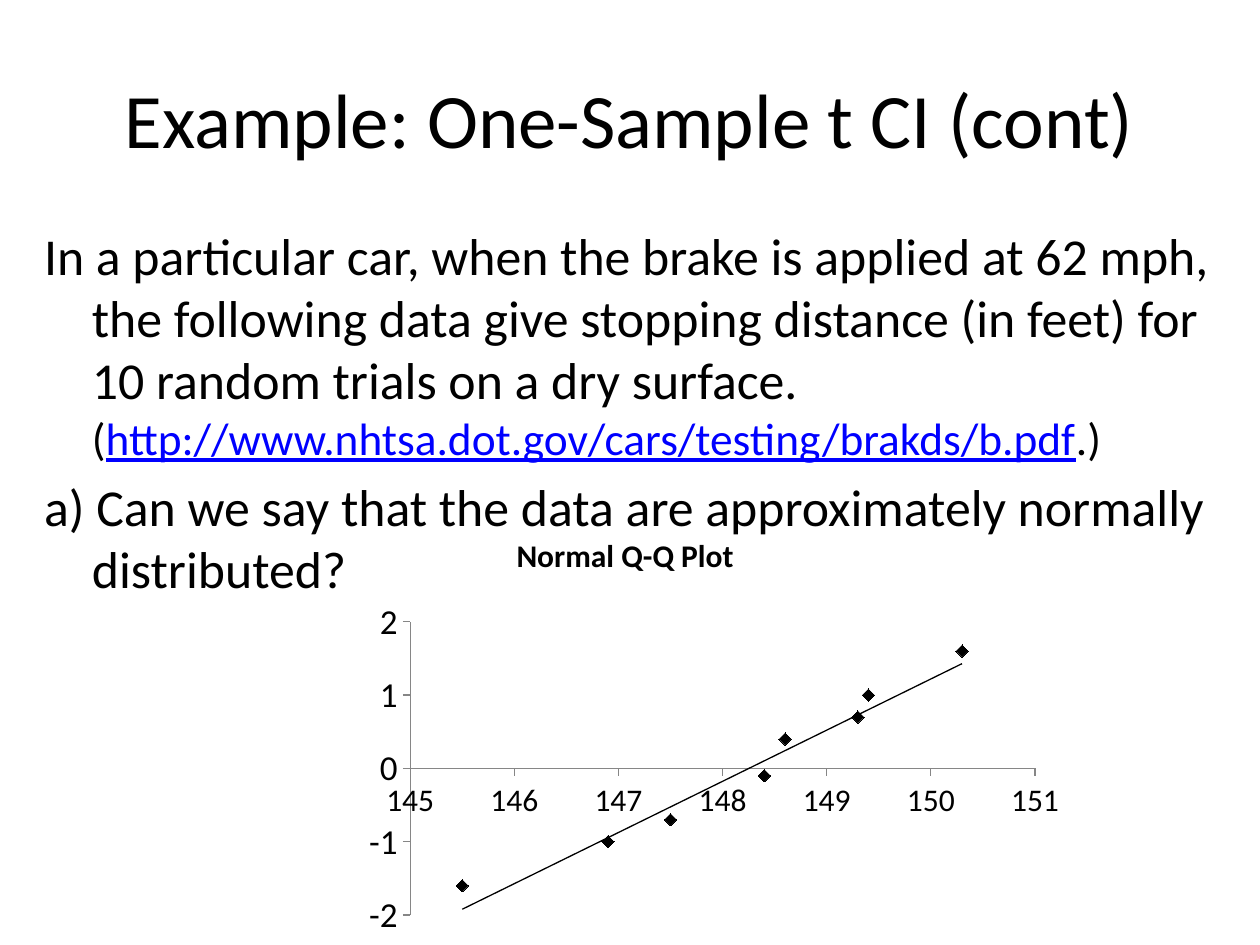
from lxml.etree import SubElement
from pptx import Presentation
from pptx.chart.data import XyChartData
from pptx.dml.color import RGBColor
from pptx.enum.chart import XL_CHART_TYPE as ChartType, XL_MARKER_STYLE as Marker
from pptx.enum.chart import XL_TICK_MARK as Tick
from pptx.enum.text import MSO_ANCHOR as Anchor, PP_ALIGN as Align
from pptx.oxml import parse_xml
from pptx.oxml.ns import nsdecls, qn
from pptx.util import Inches, Pt

WIDTH, HEIGHT = 10, 7.5
FONT = "Calibri"
COLORS = {"ink": "000000", "link": "0000FF", "axis": "868686"}
POINTS = [
    (146.9, -1), (148.4, -0.1), (149.4, 1), (148.6, 0.4), (150.3, 1.6),
    (147.5, -0.7), (147.5, -0.7), (149.3, 0.7), (148.4, -0.1), (145.5, -1.6),
]


def color(name):
    """Return the named colour."""
    return RGBColor.from_string(COLORS[name])


def area(left, top, width, height):
    """Turn shares of the slide's size into lengths."""
    return [Inches(share * side) for share, side in
            zip((left, top, width, height), (WIDTH, HEIGHT) * 2)]


def add_box(page, place, anchor=Anchor.TOP):
    """Add an empty wrapping text box and return its frame."""
    frame = page.shapes.add_textbox(*area(*place)).text_frame
    frame.word_wrap = True
    frame.vertical_anchor = anchor
    return frame


def add_span(para, text, size, ink="ink", underline=False, bold=False):
    """Add a formatted run to a paragraph."""
    span = para.add_run()
    span.text = text
    span.font.name, span.font.size = FONT, Pt(size)
    span.font.color.rgb = color(ink)
    span.font.underline, span.font.bold = underline, bold


def hang(para, indent=0.38, before=6):
    """Give a paragraph a hanging indent and space before."""
    props = para._p.get_or_add_pPr()
    props.set("marL", str(Inches(indent)))
    props.set("indent", str(-Inches(indent)))
    para.space_before = Pt(before)


def style_axis(axis, low, high, size):
    """Format one value axis with its range and label size."""
    axis.minimum_scale, axis.maximum_scale, axis.major_unit = low, high, 1
    axis.has_major_gridlines = False
    axis.major_tick_mark, axis.minor_tick_mark = Tick.OUTSIDE, Tick.NONE
    axis.format.line.color.rgb = color("axis")
    axis.format.line.width = Pt(0.75)
    labels = axis.tick_labels
    labels.number_format, labels.number_format_is_linked = "0", False
    labels.font.size, labels.font.name = Pt(size), FONT
    labels.font.color.rgb = color("ink")


def make_layout(inner=False, **shares):
    """Build a manual chart layout from shares of the chart's size."""
    layout = parse_xml(f"<c:layout {nsdecls('c')}><c:manualLayout/></c:layout>")
    target = {"layoutTarget": "inner"} if inner else {}
    modes = {"xMode": "edge", "yMode": "edge"}
    for tag, value in {**target, **modes, **shares}.items():
        SubElement(layout[0], qn(f"c:{tag}")).set("val", str(value))
    return layout


def add_trend(series):
    """Add a thin linear trend line to a series."""
    trend = parse_xml(
        f"<c:trendline {nsdecls('c', 'a')}><c:spPr><a:ln w='{Pt(0.75)}'><a:solidFill>"
        f"<a:srgbClr val='{COLORS['ink']}'/></a:solidFill></a:ln></c:spPr>"
        "<c:trendlineType val='linear'/><c:dispRSqr val='0'/><c:dispEq val='0'/>"
        "</c:trendline>")
    series._element.find(qn("c:xVal")).addprevious(trend)


def add_title(chart, text, size):
    """Give the chart a bold title laid over its upper left part."""
    frame = chart.chart_title.text_frame
    add_span(frame.paragraphs[0], text, size, bold=True)
    title = chart.chart_title._element
    for old in title.findall(qn("c:layout")):
        title.remove(old)
    title.find(qn("c:tx")).addnext(make_layout(x=0.22, y=0.02))
    title.find(qn("c:overlay")).set("val", "1")


def add_plot(page, place):
    """Add the scatter chart with diamonds and a trend line."""
    data = XyChartData()
    points = data.add_series("Series 1")
    for x, y in POINTS:
        points.add_data_point(x, y)
    chart = page.shapes.add_chart(ChartType.XY_SCATTER, *area(*place), data).chart
    chart.has_legend = False
    chart.font.name, chart.font.size = FONT, Pt(10)
    chart.font.color.rgb = color("ink")
    add_title(chart, "Normal Q-Q Plot", 18)
    style_axis(chart.category_axis, 145, 151, 18)
    style_axis(chart.value_axis, -2, 2, 20)
    plot = chart.plots[0]
    plot.vary_by_categories = False
    series = plot.series[0]
    series.smooth = False
    series.format.line.fill.background()
    series.marker.style, series.marker.size = Marker.DIAMOND, 7
    series.marker.format.fill.solid()
    series.marker.format.fill.fore_color.rgb = color("ink")
    series.marker.format.line.color.rgb = color("ink")
    add_trend(series)
    plot_area = plot._element.getparent()
    for old in plot_area.findall(qn("c:layout")):
        plot_area.remove(old)
    plot_area.insert(0, make_layout(inner=True, x=0.08, y=0.24, w=0.87, h=0.69))


def main():
    """Build the slide and save the deck."""
    deck = Presentation()
    deck.slide_width, deck.slide_height = Inches(WIDTH), Inches(HEIGHT)
    page = deck.slides.add_slide(deck.slide_layouts[6])

    heading = add_box(page, (0.05, 0.04, 0.9, 0.17), Anchor.MIDDLE).paragraphs[0]
    heading.alignment = Align.CENTER
    add_span(heading, "Example: One-Sample t CI (cont)", 44)

    body = add_box(page, (0.03, 0.23, 0.95, 0.38))
    body.margin_left = Inches(0.05)
    story, question = body.paragraphs[0], body.add_paragraph()
    for para in (story, question):
        hang(para)
    add_span(story, "In a particular car, when the brake is applied at 62 mph, the following "
             "data give stopping distance (in feet) for 10 random trials on a dry surface. ", 29.6)
    add_span(story, "(", 25.9)
    add_span(story, "http://www.nhtsa.dot.gov/cars/testing/brakds/b.pdf", 25.9, "link", True)
    add_span(story, ".)", 25.9)
    add_span(question, "a) Can we say that the data are approximately normally distributed?", 29.6)

    add_plot(page, (0.28, 0.55, 0.57, 0.45))
    deck.save("out.pptx")


if __name__ == "__main__":
    main()
